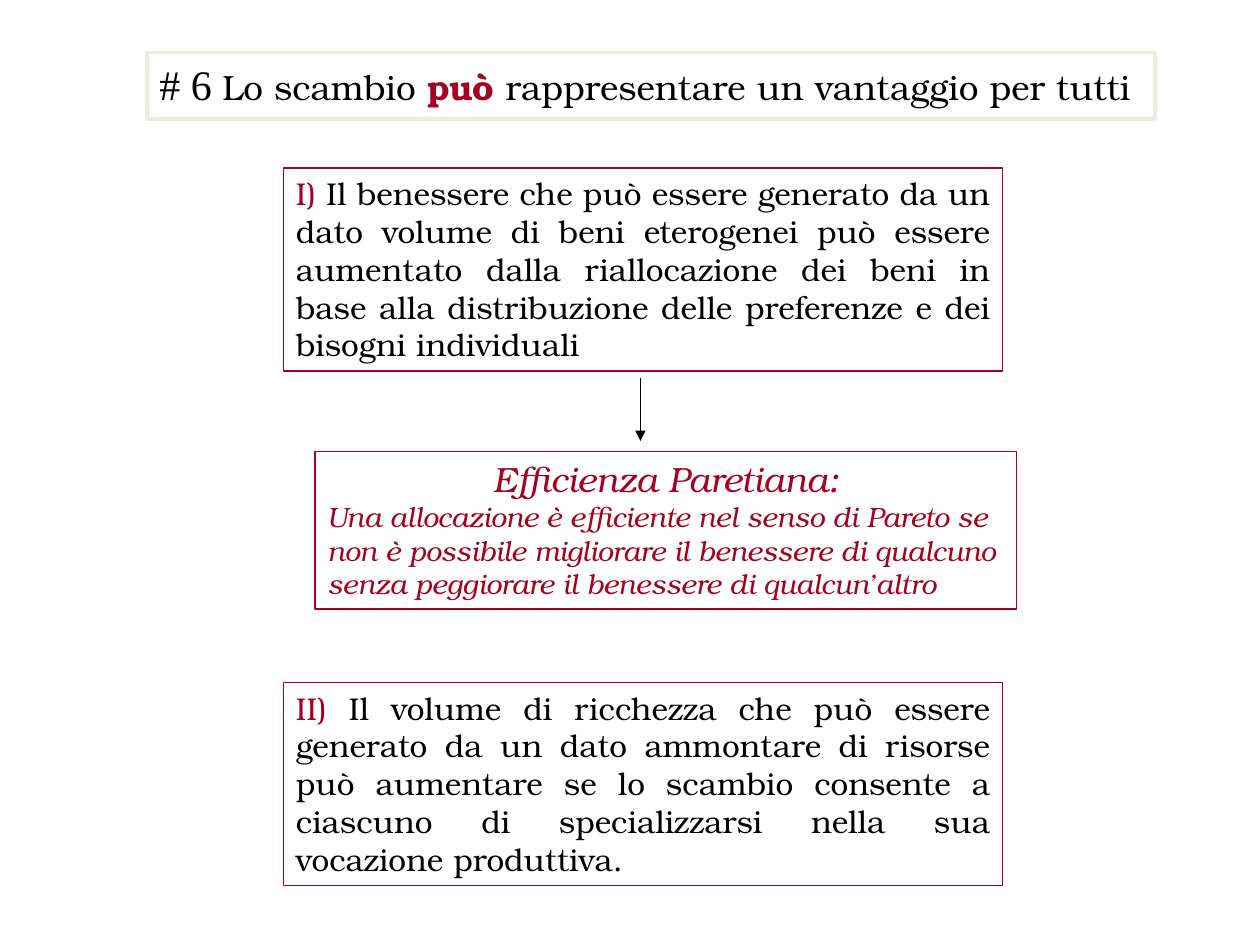
from lxml import etree
from pptx import Presentation
from pptx.dml.color import RGBColor
from pptx.enum.shapes import MSO_CONNECTOR, MSO_SHAPE
from pptx.enum.text import MSO_ANCHOR, PP_ALIGN
from pptx.oxml.ns import qn
from pptx.util import Pt

RECT = MSO_SHAPE.RECTANGLE
STRAIGHT = MSO_CONNECTOR.STRAIGHT
TOP = MSO_ANCHOR.TOP
LEFT, CENTER, JUSTIFY = PP_ALIGN.LEFT, PP_ALIGN.CENTER, PP_ALIGN.JUSTIFY

BLACK = RGBColor(0x00, 0x00, 0x00)
RED = RGBColor(0xA5, 0x00, 0x21)
CREAM = RGBColor(0xEE, 0xEC, 0xE1)


class Deck:
    font = "TeX Gyre Bonum"
    serif = "Times New Roman"

    def __init__(self, slide):
        self.slide = slide

    def box(self, left, top, width, height, color=RED, weight=0.75):
        """Add an outlined box and return its text frame."""
        shape = self.slide.shapes.add_shape(
            RECT, Pt(left), Pt(top), Pt(width), Pt(height))
        shape.shadow.inherit = False
        shape.fill.background()
        shape.line.color.rgb = color
        shape.line.width = Pt(weight)
        frame = shape.text_frame
        frame.word_wrap = True
        frame.vertical_anchor = TOP
        return frame

    def words(self, para, text, size, color=BLACK, font=None,
              bold=False, italic=False):
        """Append one styled run to a paragraph."""
        run = para.add_run()
        run.text = text
        style = run.font
        style.name = font or self.font
        style.size = Pt(size)
        style.color.rgb = color
        style.bold = bold
        style.italic = italic

    def title(self):
        frame = self.box(84, 30, 576, 38.2, CREAM, 2)
        para = frame.paragraphs[0]
        para.alignment = LEFT
        self.words(para, "# 6 ", 24, font=self.serif)
        self.words(para, "Lo scambio ", 20)
        self.words(para, "può", 20, RED, bold=True)
        self.words(para, " rappresentare un vantaggio per tutti", 20)

    def point(self, top, mark, text):
        frame = self.box(162, top, 411, 116)
        para = frame.paragraphs[0]
        para.alignment = JUSTIFY
        self.words(para, mark, 18, RED)
        self.words(para, " " + text, 18)

    def rule(self, head, text):
        frame = self.box(180, 258, 401, 90)
        first, second = frame.paragraphs[0], frame.add_paragraph()
        first.alignment, second.alignment = CENTER, LEFT
        self.words(first, head, 20, RED, italic=True)
        self.words(second, text, 16, RED, italic=True)

    def arrow(self, x, top, bottom):
        link = self.slide.shapes.add_connector(
            STRAIGHT, Pt(x), Pt(top), Pt(x), Pt(bottom))
        link.line.color.rgb = BLACK
        link.line.width = Pt(0.75)
        props = link._element.spPr
        etree.SubElement(props.find(qn("a:ln")), qn("a:tailEnd"),
                         type="triangle")
        etree.SubElement(props, qn("a:effectLst"))


def main():
    show = Presentation()
    show.slide_width, show.slide_height = Pt(720), Pt(540)
    deck = Deck(show.slides.add_slide(show.slide_layouts[6]))
    deck.title()
    deck.point(96, "I)",
               "Il benessere che può essere generato da un dato volume di "
               "beni eterogenei può essere aumentato dalla riallocazione dei "
               "beni in base alla distribuzione delle preferenze e dei "
               "bisogni individuali")
    deck.point(390, "II)",
               "Il volume di ricchezza che può essere generato da un dato "
               "ammontare di risorse può aumentare se lo scambio consente a "
               "ciascuno di specializzarsi nella sua vocazione produttiva.")
    deck.arrow(366, 216, 252)
    deck.rule("Efficienza Paretiana:",
              "Una allocazione è efficiente nel senso di Pareto se non è "
              "possibile migliorare il benessere di qualcuno senza "
              "peggiorare il benessere di qualcun’altro")
    show.save("out.pptx")


if __name__ == "__main__":
    main()
